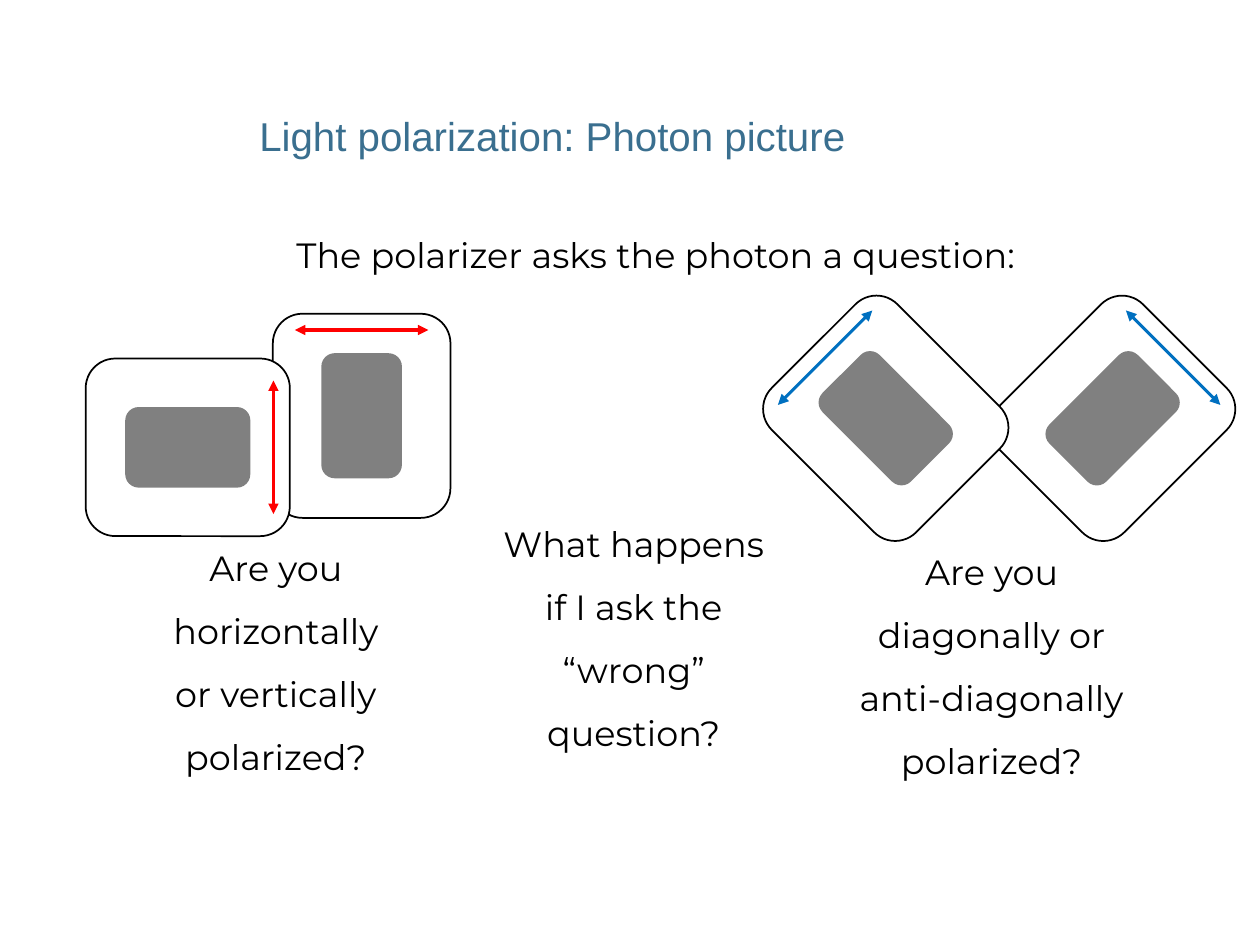
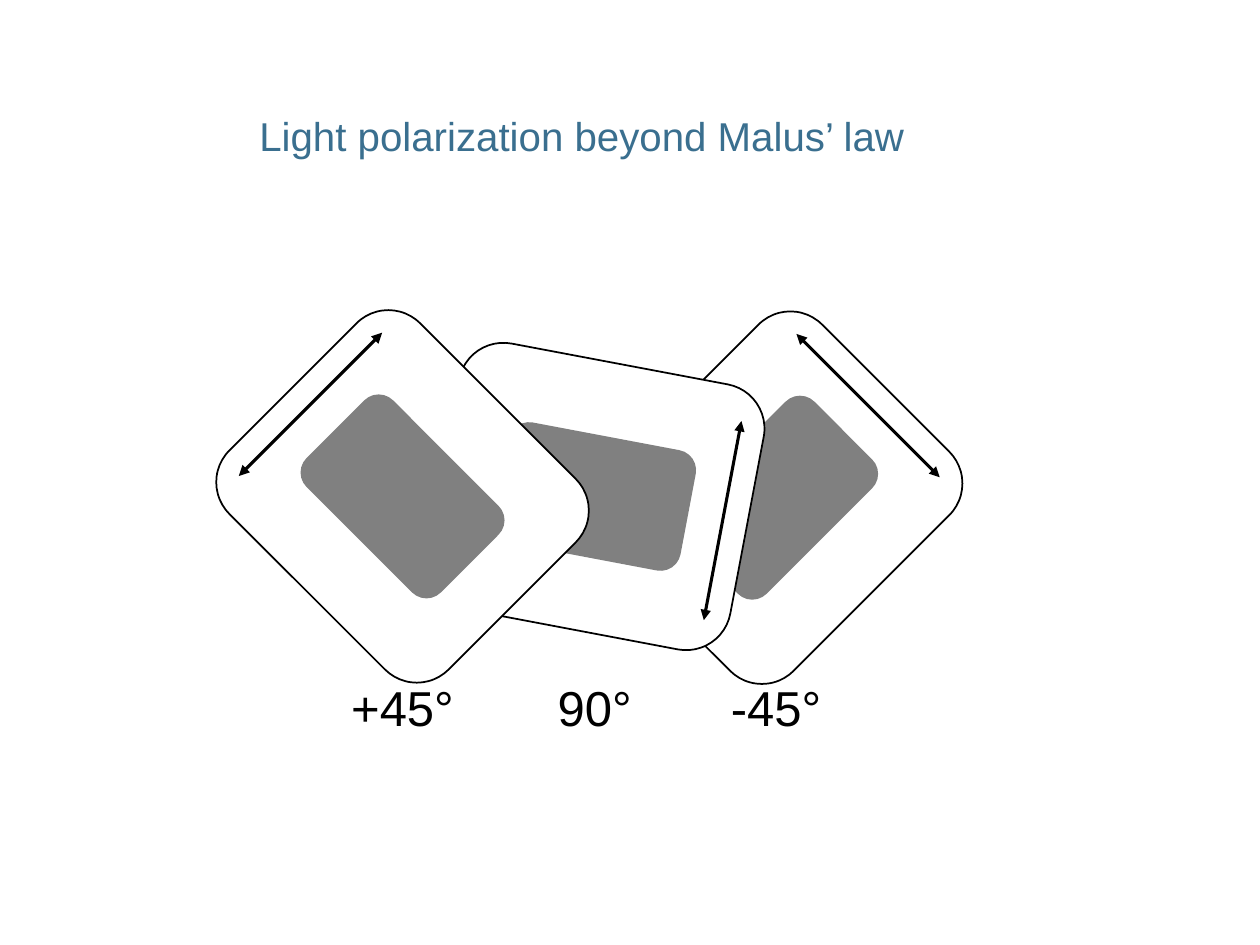
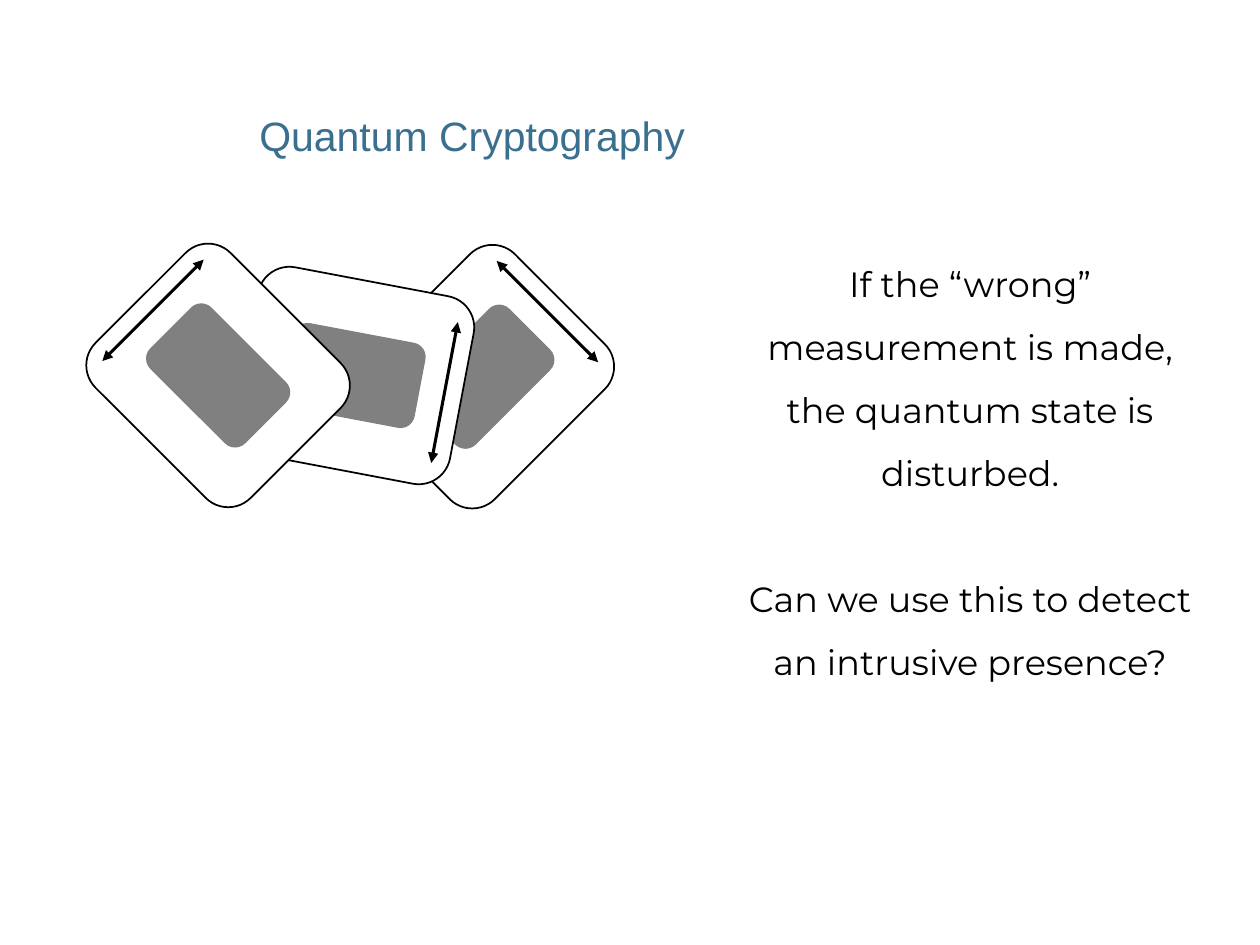
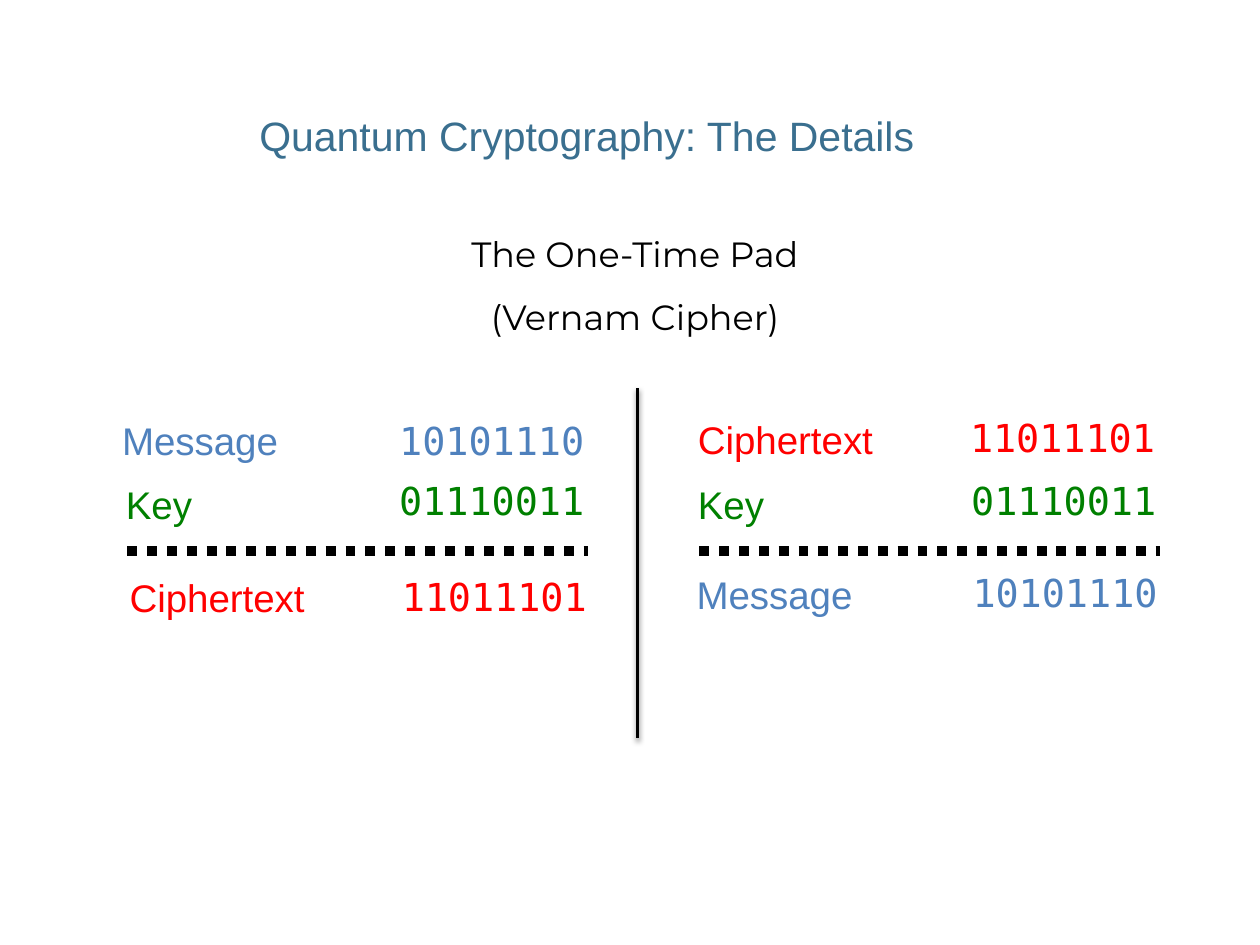
from dataclasses import dataclass
from math import cos, radians, sin

from lxml import etree
from pptx import Presentation
from pptx.dml.color import RGBColor
from pptx.enum.dml import MSO_LINE
from pptx.enum.shapes import MSO_CONNECTOR, MSO_SHAPE
from pptx.enum.text import MSO_ANCHOR, MSO_AUTO_SIZE, PP_ALIGN
from pptx.oxml.ns import qn
from pptx.util import Inches, Pt

ROUND_RECT = MSO_SHAPE.ROUNDED_RECTANGLE
STRAIGHT = MSO_CONNECTOR.STRAIGHT
SQUARE_DOTS = MSO_LINE.ROUND_DOT  # the preset dash named sysDot
MIDDLE = MSO_ANCHOR.MIDDLE
CENTER, LEFT = PP_ALIGN.CENTER, PP_ALIGN.LEFT
GROW, FIXED = MSO_AUTO_SIZE.SHAPE_TO_FIT_TEXT, MSO_AUTO_SIZE.NONE


@dataclass(frozen=True)
class Theme:
    title: str = "3A6F8F"
    black: str = "000000"
    white: str = "FFFFFF"
    gray: str = "808080"
    red: str = "FF0000"
    blue: str = "0070C0"
    green: str = "008000"
    message: str = "4F81BD"
    sans: str = "Arial"
    body: str = "Montserrat"
    mono: str = "DejaVu Sans Mono"
    title_size: float = 23
    title_size_large: float = 23.4
    body_size: float = 20
    cipher_size: float = 22
    angle_size: float = 28
    outline: float = 1
    arrow: float = 1.75


T = Theme()

# Terms of the cipher: label, bits, colour
MESSAGE = ("Message", "10101110", T.message)
KEY = ("Key", "01110011", T.green)
CIPHERTEXT = ("Ciphertext", "11011101", T.red)

# Polarizers fanned out, back to front:
# offset in card widths, drop in inches, angle, tilt of the whole, label, label width
FAN = [
    (0.585, 0.01, 135, 0, "-45°", 0.93),
    (0, 0, 180, 10.7, "90°", 0.8),
    (-0.62, 0, 45, 0, "+45°", 1.04),
]


def rgb(color):
    return RGBColor.from_string(color)


# Text
def add_text(slide, x, y, w, h, paragraphs, size, font, color=T.black,
             align=LEFT, spacing=None, gap=0, wrap=True, fit=FIXED):
    """Each paragraph is a string; a newline in it is a line break."""
    tf = slide.shapes.add_textbox(Inches(x), Inches(y), Inches(w), Inches(h)).text_frame
    tf.word_wrap = wrap
    tf.auto_size = fit
    for i, text in enumerate(paragraphs):
        p = tf.paragraphs[0] if i == 0 else tf.add_paragraph()
        p.alignment = align
        if spacing:
            p.line_spacing = spacing
        if i and gap:
            p.space_before = Pt(gap)
        for j, line in enumerate(text.split("\n")):
            if j:
                p.add_line_break()
            r = p.add_run()
            r.text = line
            r.font.size = Pt(size)
            r.font.name = font
            r.font.color.rgb = rgb(color)
    return tf


def add_body(slide, x, y, w, h, *paragraphs, gap=0):
    add_text(slide, x, y, w, h, paragraphs, T.body_size, T.body,
             align=CENTER, spacing=1.5, gap=gap, fit=GROW)


def new_slide(prs, title, size=T.title_size):
    slide = prs.slides.add_slide(prs.slide_layouts[6])
    tf = add_text(slide, 1.96, 0.89, 7.54, 0.42, [title], size, T.sans, T.title,
                  spacing=Pt(24))
    tf.vertical_anchor = MIDDLE
    return slide


# Lines
def add_line(shapes, start, end, width, color=T.black):
    line = shapes.add_connector(STRAIGHT, *(Inches(v) for v in (*start, *end)))
    line.line.color.rgb = rgb(color)
    line.line.width = Pt(width)
    effects = etree.SubElement(line._element.spPr, qn("a:effectLst"))
    return line, effects


def add_double_arrow(shapes, start, end, color):
    line, _ = add_line(shapes, start, end, T.arrow, color)
    ln = line.line._get_or_add_ln()
    for end_tag in ("a:headEnd", "a:tailEnd"):
        etree.SubElement(ln, qn(end_tag), type="triangle")


def add_divider(slide, x, top, bottom):
    _, effects = add_line(slide.shapes, (x, top), (x, bottom), 2)
    shadow = etree.SubElement(effects, qn("a:outerShdw"), blurRad=str(Pt(3.1)),
                              dist=str(Pt(1.6)), dir="5400000", rotWithShape="0")
    shade = etree.SubElement(shadow, qn("a:srgbClr"), val=T.black)
    etree.SubElement(shade, qn("a:alpha"), val="38000")


# Polarizers
def add_card(shapes, cx, cy, w, h, angle, fill, outlined=False):
    s = shapes.add_shape(ROUND_RECT, Inches(cx - w / 2), Inches(cy - h / 2),
                         Inches(w), Inches(h))
    s.rotation = angle
    s.shadow.inherit = False
    s.fill.solid()
    s.fill.fore_color.rgb = rgb(fill)
    if outlined:
        s.line.color.rgb = rgb(T.black)
        s.line.width = Pt(T.outline)
    else:
        s.line.fill.background()


def add_polarizer(slide, cx, cy, size, angle, color=T.black, tilt=0):
    """White card with a gray window and an arrow along its left edge, all turned."""
    group = slide.shapes.add_group_shape()
    shapes = group.shapes
    add_card(shapes, cx, cy, size, 0.87 * size, angle, T.white, outlined=True)
    add_card(shapes, cx, cy, 0.613 * size, 0.395 * size, angle, T.gray)
    c, s = cos(radians(angle)), sin(radians(angle))
    ax, ay = cx - 0.42 * size * c, cy - 0.42 * size * s
    dx, dy = 0.327 * size * s, -0.327 * size * c
    add_double_arrow(shapes, (ax + dx, ay + dy), (ax - dx, ay - dy), color)
    if tilt:
        group.rotation = tilt


def add_fan(slide, cx, cy, size, label_y=None):
    for offset, drop, angle, tilt, label, label_w in FAN:
        x = cx + offset * size
        add_polarizer(slide, x, cy + drop, size, angle, tilt=tilt)
        if label_y:
            add_text(slide, x - label_w / 2, label_y, label_w, 0.57, [label],
                     T.angle_size, T.sans, align=CENTER, wrap=False, fit=GROW)


# Cipher sums
def add_term(slide, term, label_x, label_y, bits_x, bits_y):
    label, bits, color = term
    add_text(slide, label_x, label_y, 2.05, 0.48, [label], T.cipher_size, T.sans, color)
    add_text(slide, bits_x, bits_y, 1.95, 0.44, [bits], T.cipher_size, T.mono, color,
             spacing=0.94)


def add_sum_line(slide, x):
    line, _ = add_line(slide.shapes, (x, 4.37), (x + 3.66, 4.37), 5.67)
    line.line.dash_style = SQUARE_DOTS


# Slides
def photon_slide(prs):
    slide = new_slide(prs, "Light polarization: Photon picture")
    size = 1.62
    add_polarizer(slide, 2.87, 3.3, size, 90, T.red)
    add_body(slide, 1.96, 1.64, 6.49, 0.61, "The polarizer asks the photon a question:")
    add_polarizer(slide, 1.49, 3.55, size, 180, T.red)
    add_body(slide, 0.99, 4.12, 2.4, 2.12,
             "Are you\nhorizontally\nor vertically\npolarized?")
    add_polarizer(slide, 8.83, 3.32, size, 135, T.blue)
    add_polarizer(slide, 7.03, 3.32, size, 45, T.blue)
    add_body(slide, 6.67, 4.15, 2.4, 2.06,
             "Are you\ndiagonally or\nanti-diagonally\npolarized?")
    add_body(slide, 3.83, 3.93, 2.4, 2.12,
             "What happens\nif I ask the\n“wrong” question?")


def malus_slide(prs):
    slide = new_slide(prs, "Light polarization beyond Malus’ law")
    add_fan(slide, 4.72, 3.94, 2.46, label_y=5.33)


def cryptography_slide(prs):
    slide = new_slide(prs, "Quantum Cryptography", T.title_size_large)
    add_fan(slide, 2.81, 2.98, 1.74)
    add_body(slide, 5.73, 1.87, 3.94, 3.64,
             "If the “wrong” measurement is made,\nthe quantum state is disturbed.",
             "Can we use this to detect an intrusive presence?", gap=36)


def one_time_pad_slide(prs):
    slide = new_slide(prs, "Quantum Cryptography: The Details", T.title_size_large)
    add_body(slide, 3.07, 1.63, 3.94, 1.11, "The One-Time Pad", "(Vernam Cipher)")
    add_divider(slide, 5.06, 3.08, 5.86)
    # Encryption
    add_term(slide, MESSAGE, 0.87, 3.26, 3.07, 3.29)
    add_term(slide, KEY, 0.9, 3.77, 3.07, 3.77)
    add_sum_line(slide, 1.01)
    add_term(slide, CIPHERTEXT, 0.93, 4.51, 3.09, 4.53)
    # Decryption
    add_term(slide, CIPHERTEXT, 5.44, 3.25, 7.6, 3.27)
    add_term(slide, KEY, 5.44, 3.77, 7.61, 3.77)
    add_sum_line(slide, 5.55)
    add_term(slide, MESSAGE, 5.43, 4.48, 7.62, 4.5)


def main():
    prs = Presentation()
    prs.slide_width, prs.slide_height = Inches(10), Inches(7.5)
    photon_slide(prs)
    malus_slide(prs)
    cryptography_slide(prs)
    one_time_pad_slide(prs)
    prs.save("out.pptx")


if __name__ == "__main__":
    main()
